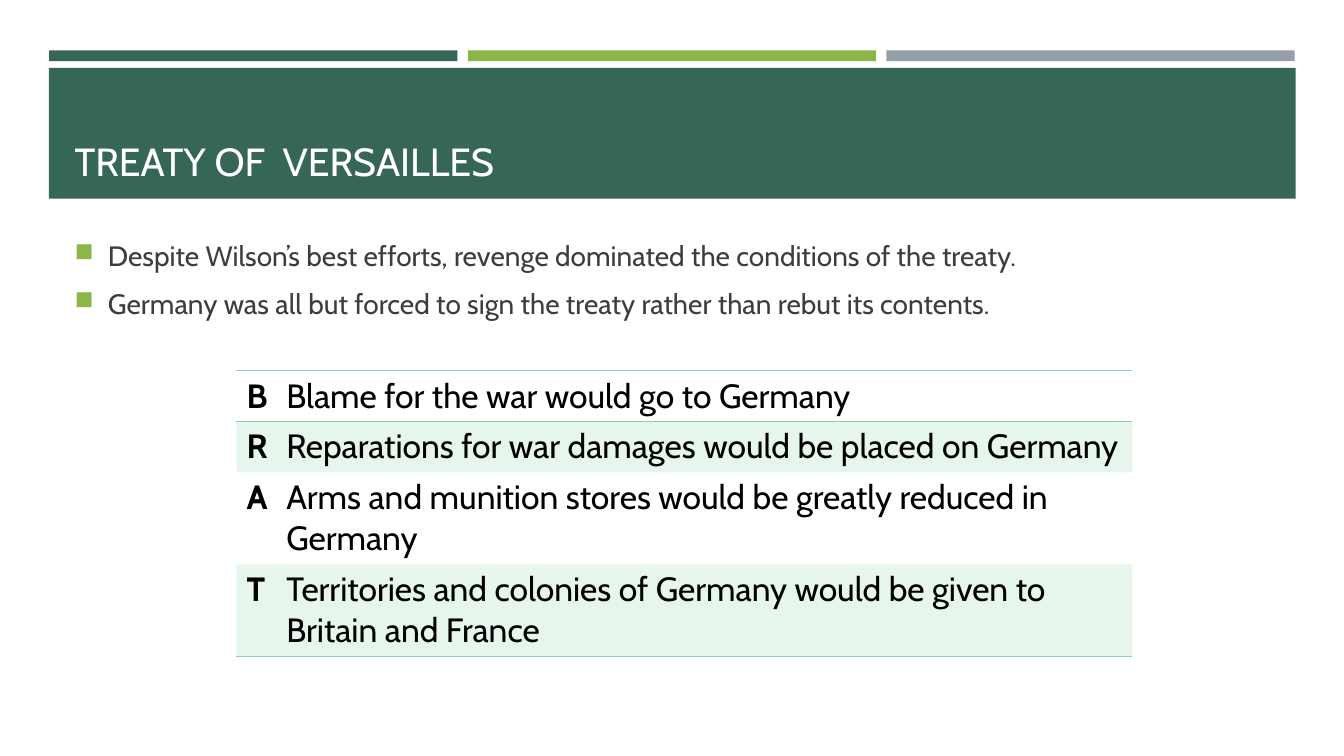
from dataclasses import dataclass

import lxml.etree
import pptx
import pptx.dml.color
import pptx.enum.shapes
import pptx.enum.text
import pptx.oxml
import pptx.oxml.ns
import pptx.util

Cm = pptx.util.Cm
Pt = pptx.util.Pt
ANCHOR = pptx.enum.text.MSO_ANCHOR
NO_STYLE_TABLE = "{2D5ABB26-0587-4C30-8999-92F81FD0307C}"


@dataclass(frozen=True)
class Theme:
    font: str = "Cabin"
    green: str = "366658"
    lime: str = "8CB64A"
    gray: str = "969FA7"
    mint: str = "88D5A9"
    white: str = "FFFFFF"
    body_text: str = "3D3D3D"
    table_text: str = "000000"
    title_size: int = 28
    body_size: int = 20
    table_size: int = 24
    band_opacity: int = 20


def rgb(color):
    return pptx.dml.color.RGBColor.from_string(color)


def add_child(parent, tag, **attributes):
    child = lxml.etree.SubElement(parent, pptx.oxml.ns.qn(tag))
    for name, value in attributes.items():
        child.set(name, str(value))
    return child


def write_text(paragraph, text, *, font, size, color, bold=False):
    run = paragraph.add_run()
    run.text = text
    run.font.name = font
    run.font.size = Pt(size)
    run.font.bold = bold
    run.font.color.rgb = rgb(color)


def set_bullet(paragraph, color, indent):
    """Give the paragraph a square bullet with a hanging indent."""
    properties = paragraph._p.get_or_add_pPr()
    properties.set("marL", str(indent))
    properties.set("indent", str(-indent))
    add_child(add_child(properties, "a:buClr"), "a:srgbClr", val=color)
    add_child(properties, "a:buSzPct", val=92000)
    add_child(properties, "a:buChar", char="■")


def set_border(cell, sides, color):
    """Draw 1 pt lines on the named sides; L, R, T and B must keep that order."""
    properties = cell._tc.get_or_add_tcPr()
    for position, side in enumerate(sides):
        line = add_child(properties, f"a:ln{side}", w=Pt(1))
        add_child(add_child(line, "a:solidFill"), "a:srgbClr", val=color)
        properties.insert(position, line)


class SlideBuilder:
    def __init__(self, slide, theme):
        self.slide = slide
        self.theme = theme

    def bar(self, left, top, width, height, color):
        shape = self.slide.shapes.add_shape(
            pptx.enum.shapes.MSO_SHAPE.RECTANGLE,
            Cm(left), Cm(top), Cm(width), Cm(height))
        shape.shadow.inherit = False
        shape.fill.solid()
        shape.fill.fore_color.rgb = rgb(color)
        shape.line.fill.background()

    def text_frame(self, left, top, width, height, anchor):
        box = self.slide.shapes.add_textbox(Cm(left), Cm(top), Cm(width), Cm(height))
        frame = box.text_frame
        frame.word_wrap = True
        frame.vertical_anchor = anchor
        return frame

    def title(self, text, *place):
        frame = self.text_frame(*place, ANCHOR.BOTTOM)
        write_text(frame.paragraphs[0], text, font=self.theme.font,
                   size=self.theme.title_size, color=self.theme.white)

    def bullets(self, lines, *place):
        frame = self.text_frame(*place, ANCHOR.TOP)
        frame.margin_top = 0
        for index, line in enumerate(lines):
            paragraph = frame.add_paragraph() if index else frame.paragraphs[0]
            paragraph.space_after = Pt(10)
            set_bullet(paragraph, self.theme.lime, Cm(0.84))
            write_text(paragraph, line, font=self.theme.font,
                       size=self.theme.body_size, color=self.theme.body_text)

    def acrostic_table(self, rows, left, top, column_widths, row_heights):
        """Bold initials beside their lines, with every second row shaded."""
        table = self.slide.shapes.add_table(
            len(rows), len(column_widths), Cm(left), Cm(top),
            Cm(sum(column_widths)), Cm(sum(row_heights))).table
        table.first_row = False
        table.horz_banding = False
        style = table._tbl.tblPr.find(pptx.oxml.ns.qn("a:tableStyleId"))
        style.text = NO_STYLE_TABLE
        for column, width in zip(table.columns, column_widths):
            column.width = Cm(width)
        last_row = len(rows) - 1
        for row_index, texts in enumerate(rows):
            table.rows[row_index].height = Cm(row_heights[row_index])
            sides = {0: "TB", last_row: "B"}.get(row_index, "")
            for column_index, text in enumerate(texts):
                cell = table.cell(row_index, column_index)
                write_text(cell.text_frame.paragraphs[0], text,
                           font=self.theme.font, size=self.theme.table_size,
                           color=self.theme.table_text, bold=column_index == 0)
                self.shade(cell, row_index % 2 == 1)
                set_border(cell, sides, self.theme.mint)

    def shade(self, cell, shaded):
        if not shaded:
            cell.fill.background()
            return
        cell.fill.solid()
        cell.fill.fore_color.rgb = rgb(self.theme.mint)
        color = cell._tc.tcPr.find(".//" + pptx.oxml.ns.qn("a:srgbClr"))
        add_child(color, "a:alpha", val=self.theme.band_opacity * 1000)


def main():
    presentation = pptx.Presentation()
    presentation.slide_width = Cm(33.87)
    presentation.slide_height = Cm(19.05)
    slide = presentation.slides.add_slide(presentation.slide_layouts[6])
    theme = Theme()
    builder = SlideBuilder(slide, theme)

    for index, color in enumerate((theme.green, theme.lime, theme.gray)):
        builder.bar(1.24 + index * 10.55, 1.27, 10.29, 0.27, color)
    builder.bar(1.23, 1.71, 31.42, 3.3, theme.green)
    builder.title("TREATY OF  VERSAILLES", 1.63, 1.96, 30.63, 2.82)
    builder.bullets([
        "Despite Wilson’s best efforts, revenge dominated the conditions of the treaty.",
        "Germany was all but forced to sign the treaty rather than rebut its contents.",
    ], 1.63, 6.02, 30.63, 2.6)
    builder.acrostic_table([
        ("B", "Blame for the war would go to Germany"),
        ("R", "Reparations for war damages would be placed on Germany"),
        ("A", "Arms and munition stores would be greatly reduced in Germany"),
        ("T", "Territories and colonies of Germany would be given to Britain and France"),
    ], 5.96, 9.34, (1, 21.58), (1.28, 1.28, 2.32, 2.32))

    presentation.save("out.pptx")


if __name__ == "__main__":
    main()
